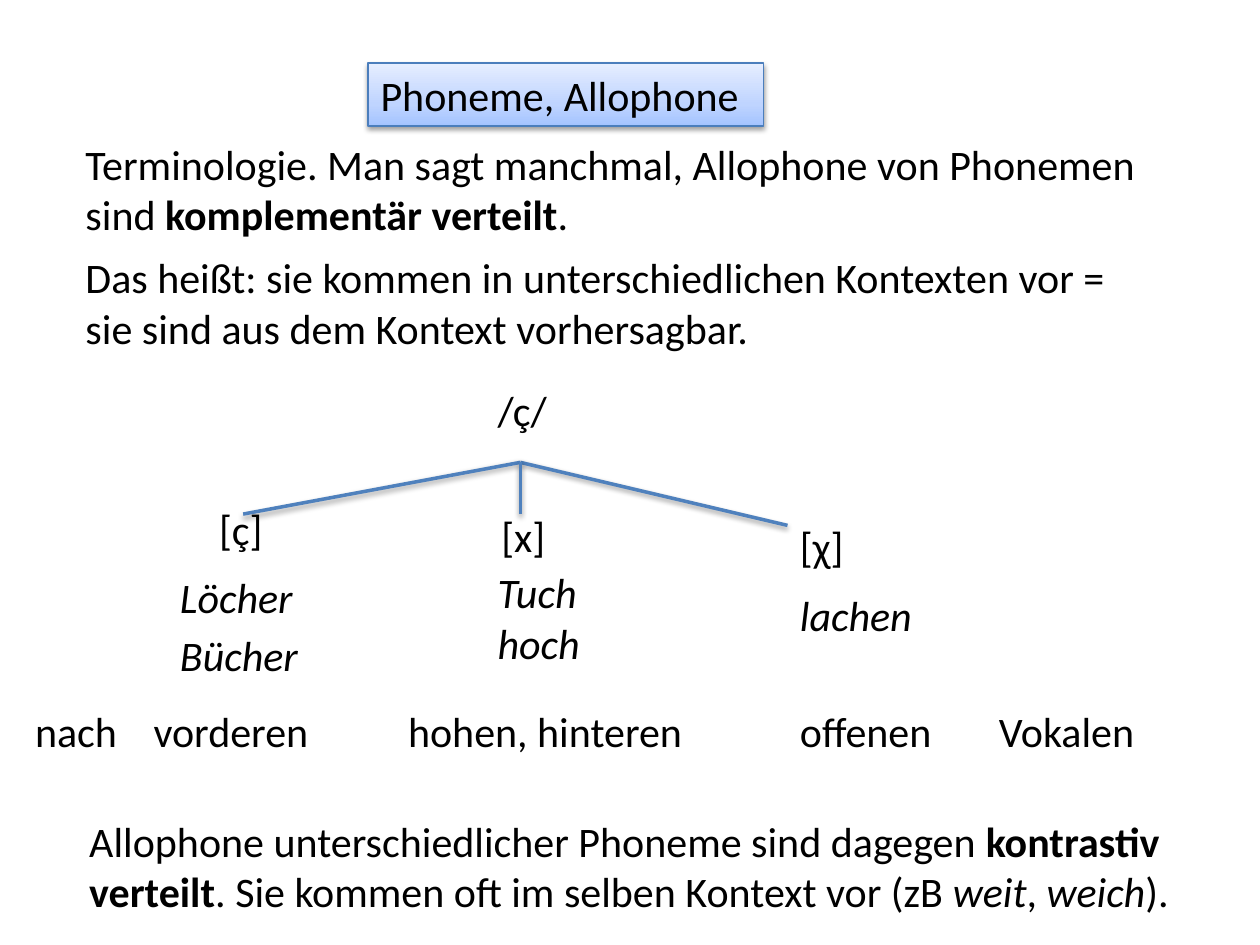
from copy import deepcopy

from lxml import etree
from pptx import Presentation
from pptx.dml.color import RGBColor
from pptx.enum.shapes import MSO_CONNECTOR
from pptx.enum.text import MSO_ANCHOR, MSO_AUTO_SIZE, PP_ALIGN
from pptx.oxml import parse_xml
from pptx.oxml.ns import nsdecls, qn
from pptx.util import Inches, Pt

BLACK = RGBColor(0x00, 0x00, 0x00)
BRANCH = RGBColor(0x4F, 0x81, 0xBD)
BORDER = RGBColor(0x4B, 0x7E, 0xBC)
GRADIENT = [RGBColor(0xA4, 0xC4, 0xFF), RGBColor(0xBF, 0xD4, 0xFF), RGBColor(0xE6, 0xEE, 0xFF)]
STOPS = [0, 0.35, 1]
SHADOW = (
    f'<a:effectLst {nsdecls("a")}>'
    '<a:outerShdw blurRad="40000" dist="20000" dir="5400000" rotWithShape="0">'
    '<a:srgbClr val="000000"><a:alpha val="38000"/></a:srgbClr>'
    '</a:outerShdw></a:effectLst>'
)


def add_text(shapes, x, y, w, h, paragraphs, wrap=True):
    """Each paragraph is a list of (text, style) runs; style is '', 'b' or 'i'."""
    sp = shapes.add_textbox(Inches(x), Inches(y), Inches(w), Inches(h))
    tf = sp.text_frame
    tf.word_wrap = wrap
    tf.auto_size = MSO_AUTO_SIZE.SHAPE_TO_FIT_TEXT
    for i, runs in enumerate(paragraphs):
        p = tf.add_paragraph() if i else tf.paragraphs[0]
        p.font.size, p.font.name = Pt(24), "Calibri"
        p.font.color.rgb = BLACK
        for text, style in runs:
            r = p.add_run()
            r.text = text
            if style == "b":
                r.font.bold = True
            elif style == "i":
                r.font.italic = True


prs = Presentation()
prs.slide_width, prs.slide_height = Inches(10), Inches(7.5)
s = prs.slides.add_slide(prs.slide_layouts[5])

# Title box with gradient, border and shadow
title = s.shapes.title
title.left, title.top = Inches(2.92), Inches(0.5)
title.width, title.height = Inches(3.14), Inches(0.5)
title.fill.gradient()
title.fill.gradient_angle = 90
gs_list = title._element.spPr.find(qn("a:gradFill")).find(qn("a:gsLst"))
gs_list.insert(1, deepcopy(gs_list[0]))
for stop, color, position in zip(title.fill.gradient_stops, GRADIENT, STOPS):
    stop.color.rgb = color
    stop.position = position
title.line.color.rgb = BORDER
title.line.width = Pt(0.75)
title._element.spPr.append(parse_xml(SHADOW))
tf = title.text_frame
tf.text = "Phoneme, Allophone"
tf.word_wrap = False
tf.auto_size = MSO_AUTO_SIZE.NONE
tf.vertical_anchor = MSO_ANCHOR.TOP
p = tf.paragraphs[0]
p.alignment = PP_ALIGN.LEFT
p.font.size, p.font.name = Pt(24), "Calibri"
p.font.color.rgb = BLACK

# Explanations
add_text(s.shapes, 0.58, 1.05, 8.61, 0.91, [[
    ("Terminologie. Man sagt manchmal, Allophone von Phonemen sind ", ""),
    ("komplementär verteilt", "b"), (".", "")]])
add_text(s.shapes, 0.58, 1.95, 8.61, 0.91, [[
    ("Das heißt: sie kommen in unterschiedlichen Kontexten vor = "
     "sie sind aus dem Kontext vorhersagbar.", "")]])
add_text(s.shapes, 0.61, 6.42, 8.92, 0.91, [[
    ("Allophone unterschiedlicher Phoneme sind dagegen ", ""),
    ("kontrastiv verteilt", "b"),
    (". Sie kommen oft im selben Kontext vor (zB ", ""),
    ("weit", "i"), (", ", ""), ("weich", "i"), (").", "")]])

# Tree: phoneme, allophones and example words
tree = s.shapes.add_group_shape().shapes
for x, y, w, h, words, style, wrap in [
    (3.85, 3, 0.61, 0.5, ["/ç/"], "", False),
    (1.64, 3.95, 0.55, 0.5, ["[ç]"], "", False),
    (3.88, 4, 0.55, 0.5, ["[x]"], "", False),
    (6.25, 4.08, 0.92, 0.5, ["[χ]"], "", True),
    (1.33, 4.49, 1.19, 0.5, ["Löcher"], "i", False),
    (1.33, 4.95, 1.42, 0.5, ["Bücher"], "i", True),
    (3.85, 4.45, 0.92, 0.91, ["Tuch", "hoch"], "i", True),
    (6.25, 4.63, 1.29, 0.5, ["lachen"], "i", True),
]:
    add_text(tree, x, y, w, h, [[(word, style)] for word in words], wrap)

# Branches
for x, y in [(6.25, 4.17), (1.93, 4.08), (4.13, 4.08)]:
    branch = tree.add_connector(
        MSO_CONNECTOR.STRAIGHT, Inches(4.13), Inches(3.67), Inches(x), Inches(y))
    branch.line.color.rgb = BRANCH
    branch.line.width = Pt(2)
    branch._element.spPr.append(parse_xml(SHADOW))

# Vowel contexts
for x, w, text in [
    (0.18, 0.86, "nach"), (1.12, 1.62, "vorderen"), (3.14, 2.58, "hohen, hinteren"),
    (6.25, 1.42, "offenen"), (7.83, 1.36, "Vokalen"),
]:
    add_text(tree, x, 5.55, w, 0.5, [[(text, "")]], wrap=text != "nach")

prs.save("out.pptx")
